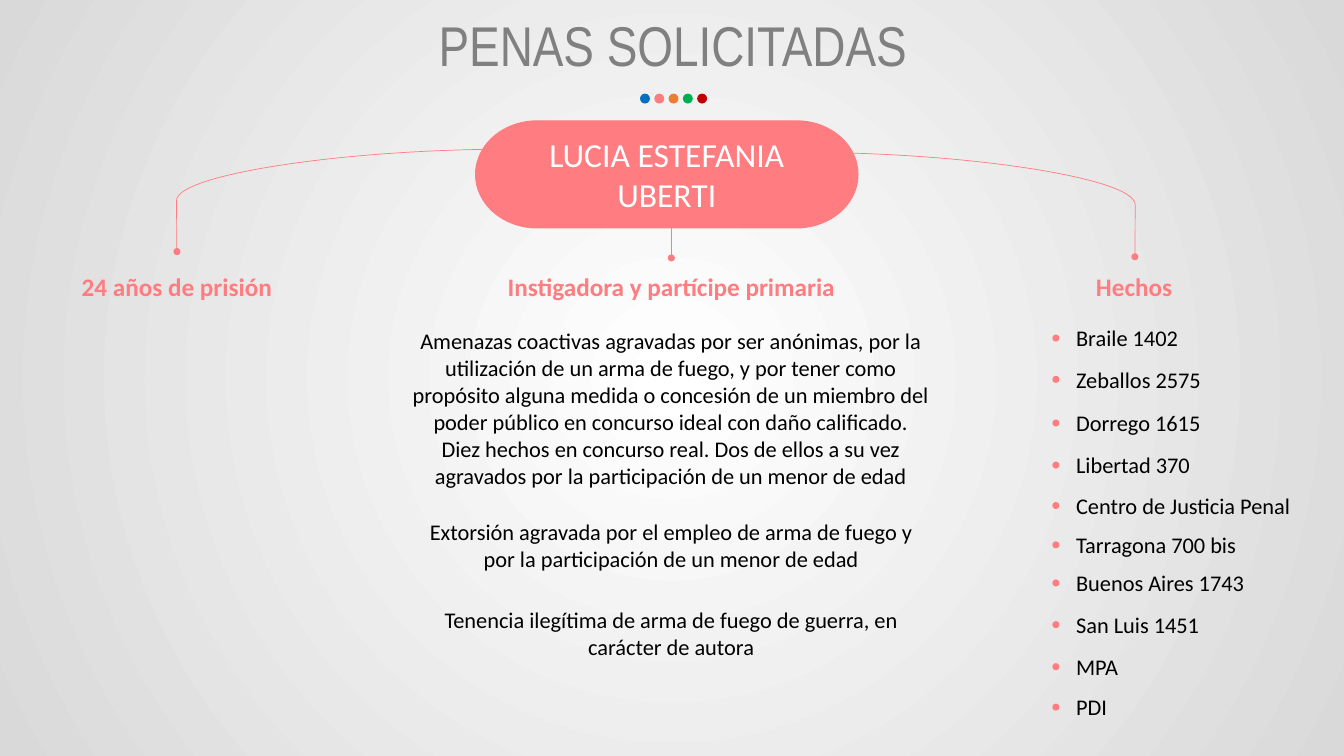
"""Build the slide on the sentences requested for one defendant."""
from lxml import etree
from pptx import Presentation
from pptx import util as u
from pptx.dml.color import RGBColor
from pptx.enum import shapes, text
from pptx.oxml.ns import qn

PINK, GREY, BLACK, WHITE = "FF7C80", "808080", "000000", "FFFFFF"
TITLE = "PENAS SOLICITADAS"
DEFENDANT = "LUCIA ESTEFANIA UBERTI"
ACCENTS = ["0070C0", PINK, "ED7D31", "00B050", "C00000"]
HEADINGS = [
    ("24 años de prisión", 4.46, 9.42),
    ("Instigadora y partícipe primaria", 16.92, 8.84),
    ("Hechos", 28.58, 6.91),
]
CHARGES = [
    (10.06, 8.13, 13.69, 4.37, [
        "Amenazas coactivas agravadas por ser anónimas, por la utilización de un arma de fuego, "
        "y por tener como propósito alguna medida o concesión de un miembro del poder público "
        "en concurso ideal con daño calificado.",
        "Diez hechos en concurso real. Dos de ellos a su vez agravados por la participación "
        "de un menor de edad",
    ]),
    (10.36, 12.93, 13.11, 1.63, [
        "Extorsión agravada por el empleo de arma de fuego y por la participación de un menor de edad",
    ]),
    (10.36, 15.16, 13.11, 1.63, [
        "Tenencia ilegítima de arma de fuego de guerra, en carácter de autora",
    ]),
]
FACTS = [
    ("Braile 1402", 8.05),
    ("Zeballos 2575", 9.09),
    ("Dorrego 1615", 10.19),
    ("Libertad 370", 11.25),
    ("Centro de Justicia Penal", 12.27),
    ("Tarragona 700 bis", 13.26),
    ("Buenos Aires 1743", 14.22),
    ("San Luis 1451", 15.27),
    ("MPA", 16.33),
    ("PDI", 17.35),
]
BRANCHES = [
    (shapes.MSO_CONNECTOR.STRAIGHT, 16.92, 5.23, 16.92, 6.5),
    (shapes.MSO_CONNECTOR.CURVE, 12.85, 3.76, 4.46, 6.34),
    (shapes.MSO_CONNECTOR.CURVE, 20.22, 3.84, 28.6, 6.47),
]
DOT, ACCENT_DOT, ACCENT_STEP = 0.14, 0.25, 0.36
FACT_HEIGHT = 0.94


def rgb(value):
    return RGBColor.from_string(value)


def write(frame, paragraphs, size=16, font="Calibri", color=BLACK, bold=False,
          align=text.PP_ALIGN.CENTER, anchor=text.MSO_ANCHOR.TOP, spacing=None):
    frame.word_wrap = True
    frame.vertical_anchor = anchor
    for index, line in enumerate(paragraphs):
        para = frame.add_paragraph() if index else frame.paragraphs[0]
        para.alignment = align
        if spacing:
            para.line_spacing = spacing
        span = para.add_run()
        span.text = line
        span.font.size = u.Pt(size)
        span.font.name = font
        span.font.bold = bold
        span.font.color.rgb = rgb(color)


def add_text(page, left, top, width, height, paragraphs, **style):
    box = page.shapes.add_textbox(u.Cm(left), u.Cm(top), u.Cm(width), u.Cm(height))
    write(box.text_frame, paragraphs, **style)


def add_filled(parent, kind, left, top, width, height, color, outlined=True):
    shape = parent.shapes.add_shape(kind, u.Cm(left), u.Cm(top), u.Cm(width), u.Cm(height))
    shape.shadow.inherit = False
    shape.fill.solid()
    shape.fill.fore_color.rgb = rgb(color)
    if outlined:
        shape.line.color.rgb = rgb(color)
        shape.line.width = u.Pt(1)
    else:
        shape.line.fill.background()
    return shape


def add_dot(page, x, y):
    add_filled(page, shapes.MSO_SHAPE.OVAL, x - DOT / 2, y - DOT / 2, DOT, DOT, PINK)


def add_branch(page, kind, x1, y1, x2, y2):
    line = page.shapes.add_connector(kind, u.Cm(x1), u.Cm(y1), u.Cm(x2), u.Cm(y2))
    line.line.color.rgb = rgb(PINK)
    line.line.width = u.Pt(0.5)
    properties = line._element.spPr
    etree.SubElement(properties, qn("a:effectLst"))
    if kind == shapes.MSO_CONNECTOR.CURVE:
        adjustments = properties.find(".//" + qn("a:avLst"))
        etree.SubElement(adjustments, qn("a:gd"), name="adj1", fmla="val 100100")
    add_dot(page, x2, y2)


def paint_background(page):
    fill = page.background.fill
    fill.gradient()
    for stop, color in zip(fill.gradient_stops, [WHITE, "D9D9D9"]):
        stop.color.rgb = rgb(color)
    for position, stop in enumerate(fill.gradient_stops):
        stop.position = position
    linear = page._element.find(".//" + qn("a:lin"))
    radial = etree.Element(qn("a:path"), {"path": "circle"})
    etree.SubElement(radial, qn("a:fillToRect"), {side: "50000" for side in "ltrb"})
    linear.getparent().replace(linear, radial)


def main():
    deck = Presentation()
    deck.slide_width, deck.slide_height = u.Cm(33.87), u.Cm(19.05)
    page = deck.slides.add_slide(deck.slide_layouts[6])
    paint_background(page)

    add_text(page, 5.74, 0.23, 22.43, 1.88, [TITLE], size=40, font="Arial Narrow",
             color=GREY, anchor=text.MSO_ANCHOR.BOTTOM, spacing=0.9)
    accents = page.shapes.add_group_shape()
    for index, color in enumerate(ACCENTS):
        add_filled(accents, shapes.MSO_SHAPE.OVAL, 16.13 + index * ACCENT_STEP, 2.36,
                   ACCENT_DOT, ACCENT_DOT, color, outlined=False)

    for branch in BRANCHES:
        add_branch(page, *branch)
    pill = add_filled(page, shapes.MSO_SHAPE.FLOWCHART_TERMINATOR, 11.99, 3.05, 9.63, 2.69, PINK)
    write(pill.text_frame, [DEFENDANT], size=24, color=WHITE, anchor=text.MSO_ANCHOR.MIDDLE)

    for heading, center, width in HEADINGS:
        add_text(page, center - width / 2, 6.71, width, 1.02, [heading],
                 size=18, color=PINK, bold=True)
    for left, top, width, height, paragraphs in CHARGES:
        add_text(page, left, top, width, height, paragraphs)
    for fact, top in FACTS:
        add_dot(page, 26.61, top + FACT_HEIGHT / 2)
        add_text(page, 26.87, top, 6.43, FACT_HEIGHT, [fact], align=text.PP_ALIGN.LEFT)

    deck.save("out.pptx")


if __name__ == "__main__":
    main()
